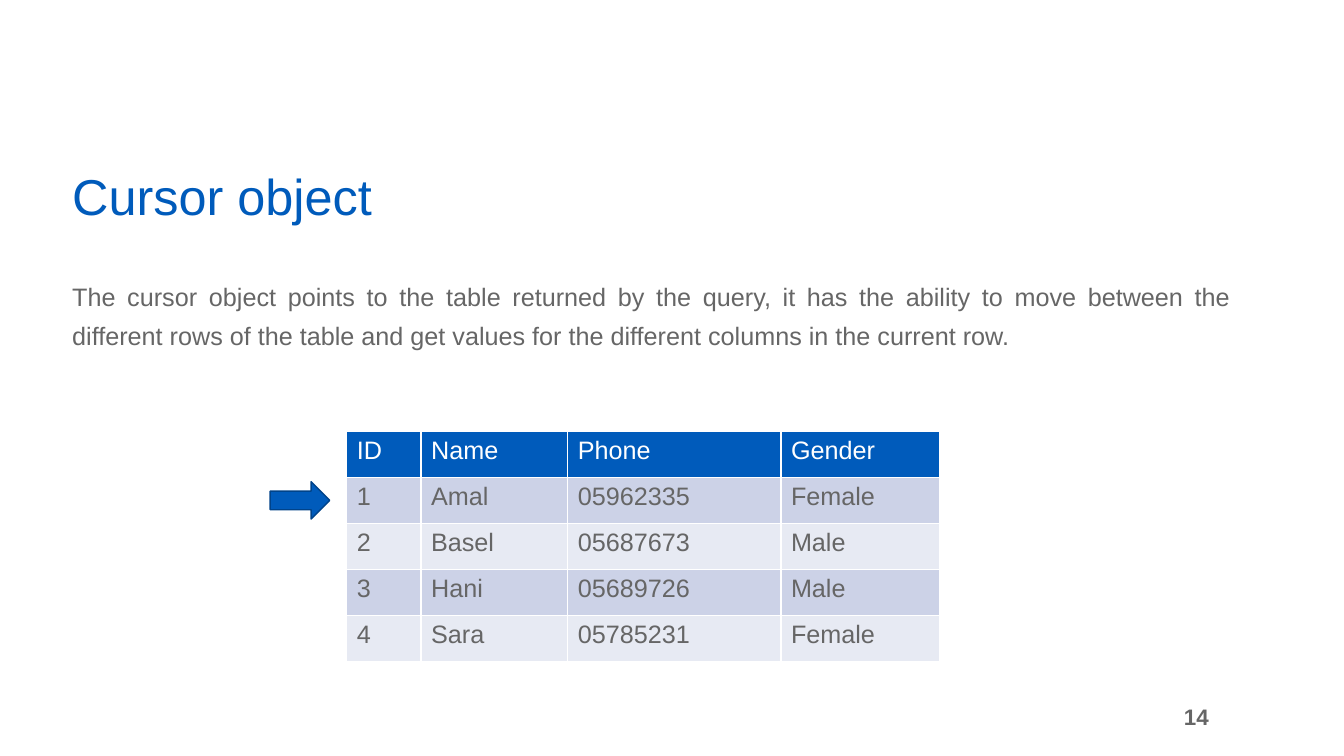
from pptx import Presentation
from pptx.dml.color import RGBColor
from pptx.enum.shapes import MSO_SHAPE
from pptx.enum.text import MSO_ANCHOR, PP_ALIGN
from pptx.util import Cm, Pt

TITLE = "Cursor object"
BODY = ("The cursor object points to the table returned by the query, it has "
        "the ability to move between the different rows of the table and get "
        "values for the different columns in the current row.")
PAGE = "14"
ROWS = [
    ("ID", "Name", "Phone", "Gender"),
    ("1", "Amal", "05962335", "Female"),
    ("2", "Basel", "05687673", "Male"),
    ("3", "Hani", "05689726", "Male"),
    ("4", "Sara", "05785231", "Female"),
]
WIDTHS = (1.87, 3.7, 5.37, 4.01)
ROW_H = 1.16
TABLE_X, TABLE_Y = 8.74, 10.87
ARROW_W, ARROW_H, ARROW_GAP = 1.5, 0.94, 0.43
CURRENT = 1

THEME = {
    "font": "Arial",
    "blue": RGBColor(0x00, 0x5B, 0xBB),
    "edge": RGBColor(0x00, 0x43, 0x8A),
    "grey": RGBColor(0x66, 0x66, 0x66),
    "white": RGBColor(0xFF, 0xFF, 0xFF),
    "bands": (RGBColor(0xE7, 0xEA, 0xF3), RGBColor(0xCC, 0xD2, 0xE7)),
    "title": Pt(36),
    "text": Pt(18),
    "page": Pt(16),
}


def assign(target, values):
    for name, value in values.items():
        setattr(target, name, value)


def write(frame, text, size, color, bold=False, **layout):
    """Fill the first paragraph of a text frame and format it."""
    para = frame.paragraphs[0]
    run = para.add_run()
    run.text = text
    assign(run.font, {"name": THEME["font"], "size": THEME[size], "bold": bold})
    run.font.color.rgb = THEME[color]
    assign(para, layout)


def add_text(slide, box, anchor, *args, **layout):
    frame = slide.shapes.add_textbox(*map(Cm, box)).text_frame
    assign(frame, {"word_wrap": True, "vertical_anchor": anchor})
    write(frame, *args, **layout)


def add_people(slide):
    """Add the table of query results."""
    size = sum(WIDTHS), ROW_H * len(ROWS)
    table = slide.shapes.add_table(
        len(ROWS), len(WIDTHS), *map(Cm, (TABLE_X, TABLE_Y, *size))).table
    for column, width in zip(table.columns, WIDTHS):
        column.width = Cm(width)
    for r, row in enumerate(ROWS):
        table.rows[r].height = Cm(ROW_H)
        fill, ink = (THEME["bands"][r % 2], "grey") if r else (THEME["blue"], "white")
        for c, text in enumerate(row):
            cell = table.cell(r, c)
            cell.fill.solid()
            cell.fill.fore_color.rgb = fill
            write(cell.text_frame, text, "text", ink)


def add_arrow(slide):
    """Point at the current row of the table."""
    left = TABLE_X - ARROW_GAP - ARROW_W
    top = TABLE_Y + ROW_H * (CURRENT + 0.5) - ARROW_H / 2
    arrow = slide.shapes.add_shape(
        MSO_SHAPE.RIGHT_ARROW, *map(Cm, (left, top, ARROW_W, ARROW_H)))
    arrow.shadow.inherit = False
    arrow.fill.solid()
    arrow.fill.fore_color.rgb = THEME["blue"]
    arrow.line.color.rgb = THEME["edge"]
    arrow.line.width = Pt(1)


def main():
    deck = Presentation()
    assign(deck, {"slide_width": Cm(33.87), "slide_height": Cm(19.05)})
    slide = deck.slides.add_slide(deck.slide_layouts[6])
    add_text(slide, (19.28, 17.55, 11.43, 1.02), MSO_ANCHOR.MIDDLE,
             PAGE, "page", "grey", True, alignment=PP_ALIGN.RIGHT)
    add_text(slide, (1.57, 4.17, 19.3, 1.65), MSO_ANCHOR.BOTTOM,
             TITLE, "title", "blue", line_spacing=0.9)
    add_text(slide, (1.57, 6.73, 29.69, 10.97), MSO_ANCHOR.TOP,
             BODY, "text", "grey", alignment=PP_ALIGN.JUSTIFY, line_spacing=1.3)
    add_people(slide)
    add_arrow(slide)
    deck.save("out.pptx")


if __name__ == "__main__":
    main()
